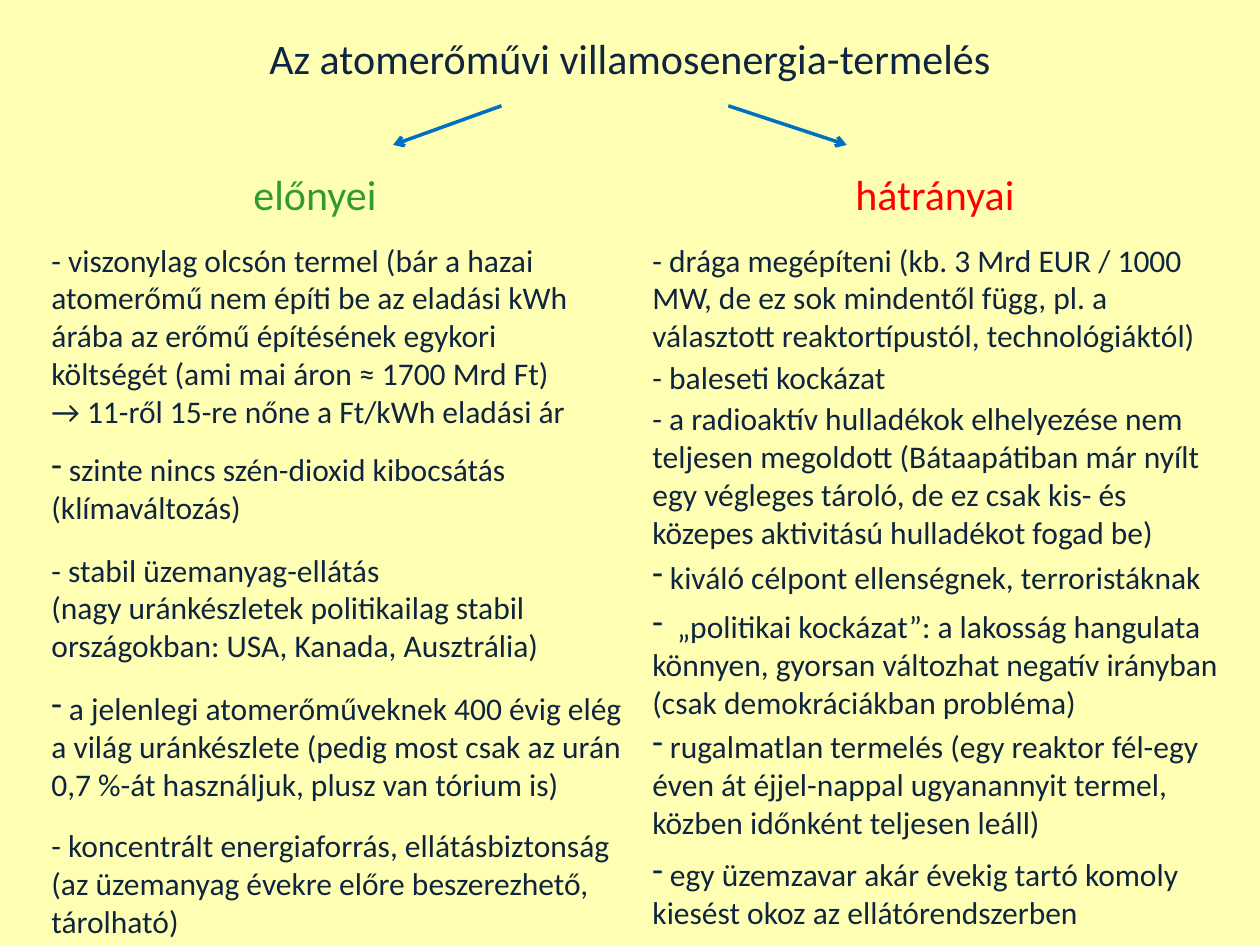
from lxml.etree import SubElement
from pptx import Presentation
from pptx.dml.color import RGBColor
from pptx.enum.shapes import MSO_CONNECTOR
from pptx.enum.text import MSO_AUTO_SIZE as AUTO, PP_ALIGN as ALIGN
from pptx.oxml.ns import qn
from pptx.util import Pt

SCALE = 9144
NAVY, GREEN, RED, BLUE, CREAM = "0F243E", "339933", "FF0000", "0070C0", "FFFFB3"
LEFT, RIGHT, COLUMN = 31, 508, 469


def paint(color_format, color):
    color_format.rgb = RGBColor.from_string(color)


def add_text(left, top, width, height, text, color=NAVY, size=18, align=ALIGN.LEFT, dash=False):
    box = slide.shapes.add_textbox(*(n * SCALE for n in (left, top, width, height)))
    frame = box.text_frame
    frame.word_wrap = True
    frame.auto_size = AUTO.SHAPE_TO_FIT_TEXT
    frame.text = text
    for paragraph in frame.paragraphs:
        paragraph.alignment = align
        if dash:
            SubElement(paragraph._p.get_or_add_pPr(), qn("a:buChar"), char="-")
        for run in paragraph.runs:
            run.font.name = "Calibri"
            run.font.size = Pt(size)
            paint(run.font.color, color)


prs = Presentation()
prs.slide_width, prs.slide_height = 1000 * SCALE, 750 * SCALE
slide = prs.slides.add_slide(prs.slide_layouts[6])
background = slide.background.fill
background.solid()
paint(background.fore_color, CREAM)

headings = [
    (0, 21, 1000, "Az atomerőművi villamosenergia-termelés", NAVY),
    (0, 129, 500, "előnyei", GREEN),
    (492, 129, 500, "hátrányai", RED),
]
for left, top, width, text, color in headings:
    add_text(left, top, width, 50, text, color, 24, ALIGN.CENTER)

for start, end in ((398, 312), (578, 672)):
    ends = (n * SCALE for n in (start, 84, end, 115))
    arrow = slide.shapes.add_connector(MSO_CONNECTOR.STRAIGHT, *ends)
    arrow.line.width = Pt(2)
    paint(arrow.line.color, BLUE)
    SubElement(arrow.line._get_or_add_ln(), qn("a:tailEnd"), type="arrow")
    SubElement(arrow._element.spPr, qn("a:effectLst"))

points = [
    (LEFT, 186, COLUMN, 162, False,
     "- viszonylag olcsón termel (bár a hazai atomerőmű nem építi be az eladási kWh árába "
     "az erőmű építésének egykori költségét (ami mai áron ≈ 1700 Mrd Ft)\v"
     "→ 11-ről 15-re nőne a Ft/kWh eladási ár"),
    (LEFT, 352, COLUMN, 71, True, " szinte nincs szén-dioxid kibocsátás (klímaváltozás)"),
    (LEFT, 432, COLUMN, 101, False,
     "- stabil üzemanyag-ellátás\n"
     "(nagy uránkészletek politikailag stabil országokban: USA, Kanada, Ausztrália)"),
    (LEFT, 542, 477, 101, True,
     " a jelenlegi atomerőműveknek 400 évig elég a világ uránkészlete "
     "(pedig most csak az urán 0,7 %-át használjuk, plusz van tórium is)"),
    (LEFT, 651, COLUMN, 101, False,
     "- koncentrált energiaforrás, ellátásbiztonság "
     "(az üzemanyag évekre előre beszerezhető, tárolható)"),
    (RIGHT, 186, COLUMN, 101, False,
     "- drága megépíteni (kb. 3 Mrd EUR / 1000 MW, de ez sok mindentől függ, "
     "pl. a választott reaktortípustól, technológiáktól)"),
    (RIGHT, 279, COLUMN, 40, False, "- baleseti kockázat"),
    (RIGHT, 312, COLUMN, 131, False,
     "- a radioaktív hulladékok elhelyezése nem teljesen megoldott (Bátaapátiban már nyílt "
     "egy végleges tároló, de ez csak kis- és közepes aktivitású hulladékot fogad be)"),
    (RIGHT, 438, COLUMN, 40, True, " kiváló célpont ellenségnek, terroristáknak"),
    (RIGHT, 477, COLUMN, 101, True,
     "  „politikai kockázat”: a lakosság hangulata könnyen, gyorsan változhat "
     "negatív irányban (csak demokráciákban probléma)"),
    (RIGHT, 572, COLUMN, 101, True,
     " rugalmatlan termelés (egy reaktor fél-egy éven át éjjel-nappal ugyanannyit termel, "
     "közben időnként teljesen leáll)"),
    (RIGHT, 674, COLUMN, 71, True,
     " egy üzemzavar akár évekig tartó komoly kiesést okoz az ellátórendszerben"),
]
for left, top, width, height, dash, text in points:
    add_text(left, top, width, height, text, dash=dash)

prs.save("out.pptx")
